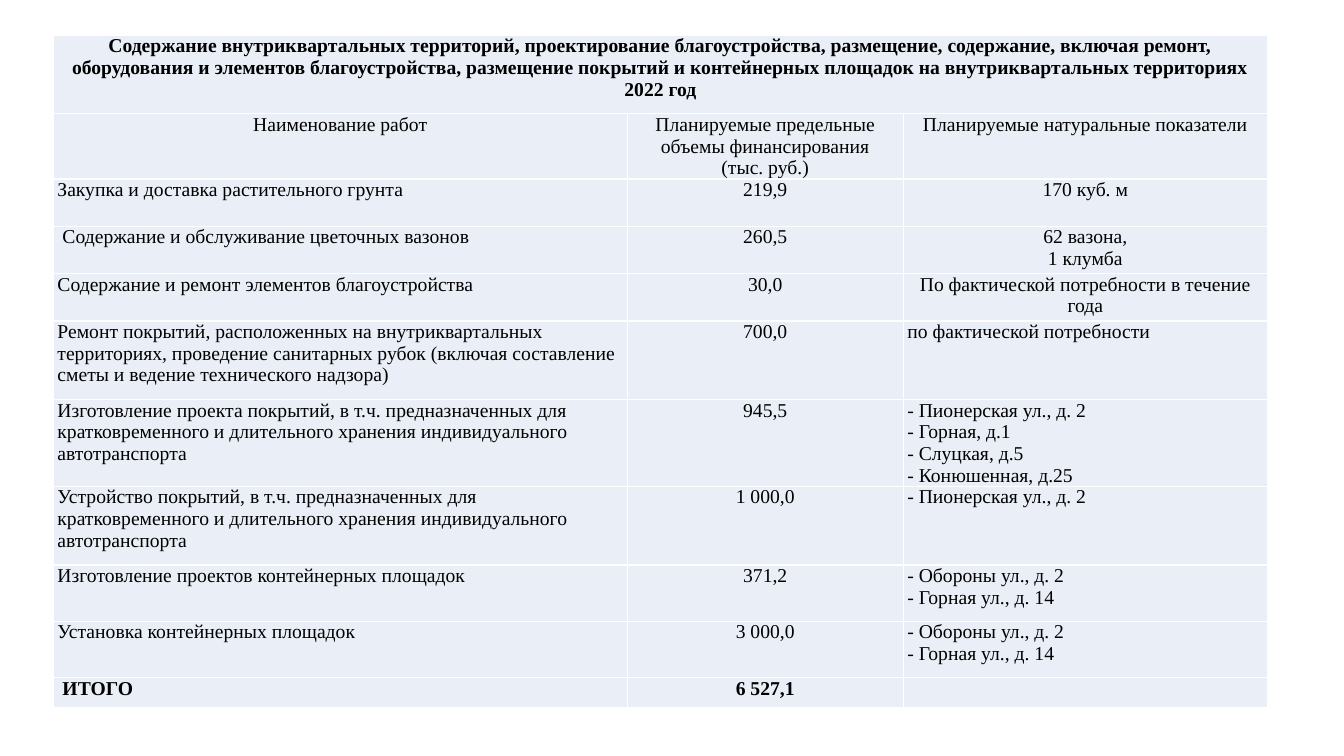
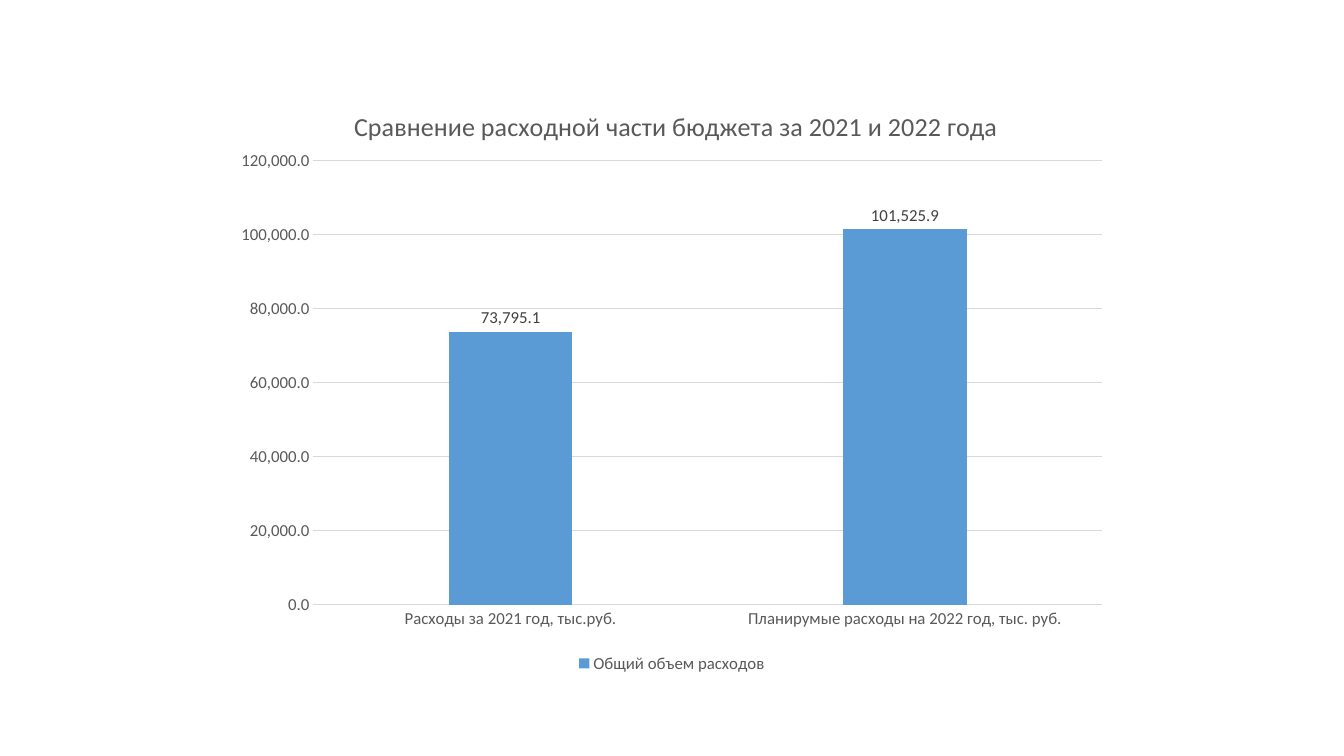
from pptx import Presentation
from pptx.chart.data import CategoryChartData
from pptx.dml.color import RGBColor
from pptx.enum.chart import (XL_CHART_TYPE as ChartType, XL_LABEL_POSITION as LabelPosition,
                             XL_LEGEND_POSITION as LegendPosition, XL_TICK_MARK as TickMark)
from pptx.enum.text import PP_ALIGN as Align
from pptx.oxml import parse_xml
from pptx.oxml.ns import nsdecls, qn
from pptx.oxml.xmlchemy import OxmlElement
from pptx.util import Inches, Pt

TABLE_FONT, CHART_FONT = "Times New Roman", "Calibri"
BLACK, WHITE, CELL_FILL = "000000", "FFFFFF", "EAEFF7"
GREY, LABEL_GREY, GRID, BAR = "595959", "404040", "D9D9D9", "5B9BD5"
NUMBER_FORMAT = "#,##0.0"

COLUMN_WIDTHS = [5.69, 2.74, 3.61]
ROW_HEIGHTS = [0.78, 0.53, 0.47, 0.47, 0.47, 0.78, 0.78, 0.78, 0.56, 0.56, 0.3]
CELL_MARGIN, INDENTED_MARGIN = 0.04, 0.09

HEADING = [
    "Содержание внутриквартальных территорий, проектирование благоустройства, размещение, "
    "содержание, включая ремонт, оборудования и элементов благоустройства, размещение покрытий "
    "и контейнерных площадок на внутриквартальных территориях",
    "2022 год",
]
COLUMN_HEADS = ["Наименование работ",
                "Планируемые предельные объемы финансирования\n(тыс. руб.)",
                "Планируемые натуральные показатели"]
WORKS = [
    ("Закупка и доставка растительного грунта", "219,9", "170 куб. м"),
    ("Содержание и обслуживание цветочных вазонов", "260,5", "62 вазона,\n1 клумба"),
    ("Содержание и ремонт элементов благоустройства", "30,0",
     "По фактической потребности в течение года"),
    ("Ремонт покрытий, расположенных на внутриквартальных территориях, проведение санитарных "
     "рубок (включая составление сметы и ведение технического надзора)", "700,0",
     "по фактической потребности"),
    ("Изготовление проекта покрытий, в т.ч. предназначенных для кратковременного и длительного "
     "хранения индивидуального автотранспорта", "945,5",
     "- Пионерская ул., д. 2\n- Горная, д.1\n- Слуцкая, д.5\n- Конюшенная, д.25"),
    ("Устройство покрытий, в т.ч. предназначенных для кратковременного и длительного "
     "хранения индивидуального автотранспорта", "1 000,0", "- Пионерская ул., д. 2"),
    ("Изготовление проектов контейнерных площадок", "371,2",
     "- Обороны ул., д. 2\n- Горная ул., д. 14"),
    ("Установка контейнерных площадок", "3 000,0",
     "- Обороны ул., д. 2\n- Горная ул., д. 14"),
]
TOTAL = ("ИТОГО", "6 527,1", "")
INDENTED = {WORKS[1][0], TOTAL[0]}
CENTRED_MEASURES = {work[2] for work in WORKS[:3]}


def rgb(color):
    return RGBColor.from_string(color)


def set_font(font, name, size, color, bold=False):
    font.name, font.size, font.bold = name, Pt(size), bold
    font.color.rgb = rgb(color)


def add_page(deck):
    return deck.slides.add_slide(deck.slide_layouts[6])


def add_borders(cell):
    for side in ("lnL", "lnR", "lnT", "lnB"):
        cell._tc.get_or_add_tcPr().append(parse_xml(
            f'<a:{side} {nsdecls("a")} w="12700"><a:solidFill>'
            f'<a:srgbClr val="{WHITE}"/></a:solidFill></a:{side}>'))


def fill_cell(cell, text, centred, bold):
    add_borders(cell)
    cell.fill.solid()
    cell.fill.fore_color.rgb = rgb(CELL_FILL)
    cell.margin_left = Inches(INDENTED_MARGIN if text in INDENTED else CELL_MARGIN)
    cell.margin_right = Inches(CELL_MARGIN)
    cell.margin_top = cell.margin_bottom = 0
    cell.text = text
    for para in cell.text_frame.paragraphs:
        para.alignment = Align.CENTER if centred else Align.LEFT
        set_font(para.font, TABLE_FONT, 14, BLACK, bold)


def add_works_table(page, left, top):
    rows = [("\n".join(HEADING), "", ""), COLUMN_HEADS, *WORKS, TOTAL]
    table = page.shapes.add_table(
        len(rows), len(COLUMN_WIDTHS), Inches(left), Inches(top),
        Inches(sum(COLUMN_WIDTHS)), Inches(sum(ROW_HEIGHTS))).table
    table.first_row = table.horz_banding = False
    for column, width in zip(table.columns, COLUMN_WIDTHS):
        column.width = Inches(width)
    for row, height in zip(table.rows, ROW_HEIGHTS):
        row.height = Inches(height)
    table.cell(0, 0).merge(table.cell(0, len(COLUMN_WIDTHS) - 1))
    for row_index, texts in enumerate(rows):
        bold = row_index in (0, len(rows) - 1)
        for column_index, text in enumerate(texts):
            centred = row_index < 2 or column_index == 1 or text in CENTRED_MEASURES
            fill_cell(table.cell(row_index, column_index), text, centred, bold)


def set_layout(element, **places):
    """Fix a chart part at fractions of the chart area."""
    layout = element.find(qn("c:layout"))
    if layout is None:
        layout = OxmlElement("c:layout")
        element.insert(0 if element.find(qn("c:tx")) is None else 1, layout)
    for child in list(layout):
        layout.remove(child)
    manual = OxmlElement("c:manualLayout")
    layout.append(manual)
    for tag, value in places.items():
        item = OxmlElement(f"c:{tag}")
        item.set("val", str(value))
        manual.append(item)


def format_title(chart, text):
    chart.has_title = True
    frame = chart.chart_title.text_frame
    frame.text = text
    set_font(frame.paragraphs[0].font, CHART_FONT, 18.6, GREY)
    set_layout(chart.chart_title._element, xMode="edge", yMode="edge", x=0.14, y=0.04)


def format_axes(chart):
    for axis in (chart.category_axis, chart.value_axis):
        axis.major_tick_mark = axis.minor_tick_mark = TickMark.NONE
        set_font(axis.tick_labels.font, CHART_FONT, 12, GREY)
    values = chart.value_axis
    values.minimum_scale, values.maximum_scale, values.major_unit = 0, 120000, 20000
    values.tick_labels.number_format = NUMBER_FORMAT
    values.tick_labels.number_format_is_linked = False
    values.format.line.fill.background()
    for line in (chart.category_axis.format.line, values.major_gridlines.format.line):
        line.color.rgb = rgb(GRID)
        line.width = Pt(0.75)


def format_bars(plot):
    plot.gap_width, plot.overlap, plot.vary_by_categories = 219, -27, False
    fill = plot.series[0].format.fill
    fill.solid()
    fill.fore_color.rgb = rgb(BAR)
    plot.has_data_labels = True
    labels = plot.data_labels
    labels.show_value = True
    labels.position = LabelPosition.OUTSIDE_END
    labels.number_format, labels.number_format_is_linked = NUMBER_FORMAT, False
    set_font(labels.font, CHART_FONT, 12, LABEL_GREY)


def add_budget_chart(page, left, top, width, height):
    data = CategoryChartData(number_format=NUMBER_FORMAT)
    data.categories = ["Расходы за 2021 год, тыс.руб.",
                       "Планирумые расходы на 2022 год, тыс. руб."]
    data.add_series("Общий объем расходов", [73795.1, 101525.9])
    chart = page.shapes.add_chart(ChartType.COLUMN_CLUSTERED, Inches(left), Inches(top),
                                  Inches(width), Inches(height), data).chart
    set_font(chart.font, CHART_FONT, 10, BLACK)
    format_title(chart, "Сравнение расходной части бюджета за 2021 и 2022 года")
    format_axes(chart)
    format_bars(chart.plots[0])
    set_layout(chart._chartSpace.chart.plotArea, layoutTarget="inner", xMode="edge",
               yMode="edge", x=0.1, y=0.136, w=0.88, h=0.743)
    chart.has_legend = True
    chart.legend.position = LegendPosition.BOTTOM
    chart.legend.include_in_layout = False
    set_font(chart.legend.font, CHART_FONT, 12, GREY)


def main():
    deck = Presentation()
    deck.slide_width, deck.slide_height = Inches(13.33), Inches(7.5)
    add_works_table(add_page(deck), 0.53, 0.35)
    add_budget_chart(add_page(deck), 2.22, 0.79, 8.89, 5.93)
    deck.save("out.pptx")


if __name__ == "__main__":
    main()
